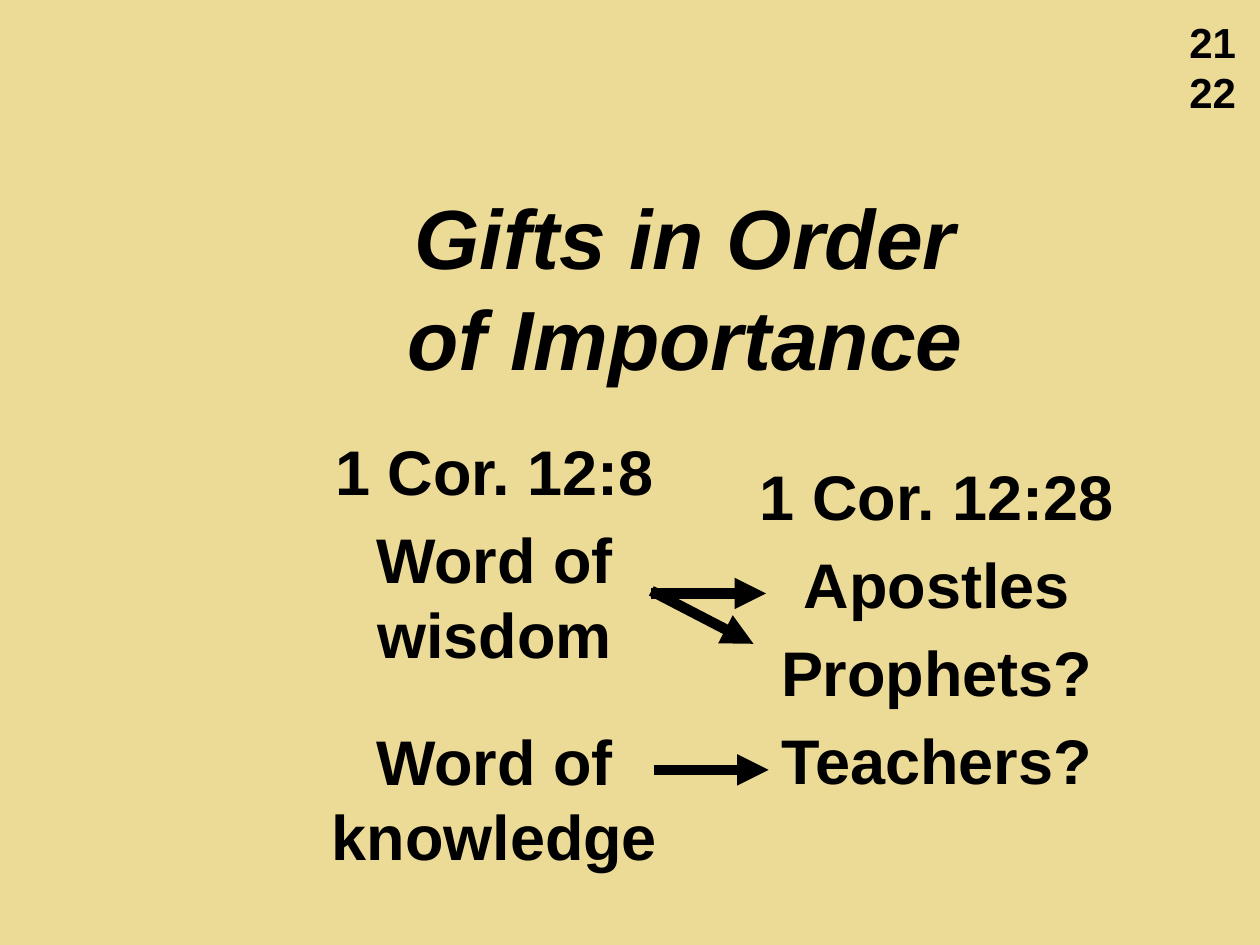
from lxml.etree import SubElement
from pptx import Presentation
from pptx.dml.color import RGBColor
from pptx.enum.shapes import MSO_CONNECTOR as Connector
from pptx.enum.text import MSO_ANCHOR as Anchor, MSO_AUTO_SIZE as AutoSize, PP_ALIGN as Align
from pptx.oxml.ns import qn
from pptx.util import Inches, Pt

WIDTH, HEIGHT = Inches(10), Inches(7.5)
TITLE_ONLY = 5
SAND, BLACK = "ECDB96", "000000"
FONT = "Arial"
BODY_SIZE, BODY_GAP, GROUP_GAP = 36, 7.2, 29


def color(value):
    """Turn a hex string into a colour."""
    return RGBColor.from_string(value)


def across(percent):
    """Convert a percentage of the slide width to a length."""
    return round(WIDTH * percent / 100)


def down(percent):
    """Convert a percentage of the slide height to a length."""
    return round(HEIGHT * percent / 100)


def box(left, top, width, height):
    """Convert a box in slide percentages to lengths."""
    return across(left), down(top), across(width), down(height)


def write(frame, lines, size, align, italic=False):
    """Fill a text frame with one bold paragraph per line."""
    frame.text = "\n".join(lines)
    for paragraph in frame.paragraphs:
        paragraph.alignment = align
        for run in paragraph.runs:
            font = run.font
            font.name, font.size = FONT, Pt(size)
            font.bold, font.italic = True, italic
            font.color.rgb = color(BLACK)


def add_title(slide, text, area):
    """Place and format the title placeholder."""
    title = slide.shapes.title
    title.left, title.top, title.width, title.height = box(*area)
    frame = title.text_frame
    write(frame, [text], 48, Align.CENTER, italic=True)
    frame.auto_size = AutoSize.NONE
    frame.vertical_anchor = Anchor.MIDDLE


def add_gift_list(slide, lines, area):
    """Add a centred list of gifts and return its paragraphs."""
    frame = slide.shapes.add_textbox(*box(*area)).text_frame
    frame.word_wrap = True
    write(frame, lines, BODY_SIZE, Align.CENTER)
    for paragraph in frame.paragraphs:
        paragraph.space_before = Pt(BODY_GAP)
    return frame.paragraphs


def add_page_numbers(slide, numbers, area):
    """Add the stacked page numbers in the corner."""
    frame = slide.shapes.add_textbox(*box(*area)).text_frame
    write(frame, numbers, 24, Align.LEFT)
    frame.word_wrap = False
    frame.auto_size = AutoSize.SHAPE_TO_FIT_TEXT


def add_arrow(slide, start, end):
    """Draw a thick arrow between two points in slide percentages."""
    arrow = slide.shapes.add_connector(
        Connector.STRAIGHT, across(start[0]), down(start[1]), across(end[0]), down(end[1])
    )
    arrow.line.color.rgb = color(BLACK)
    arrow.line.width = Pt(6)
    SubElement(arrow.line._get_or_add_ln(), qn("a:tailEnd"), type="triangle")
    SubElement(arrow._element.spPr, qn("a:effectLst"))


def main():
    """Build and save the slide."""
    deck = Presentation()
    deck.slide_width, deck.slide_height = WIDTH, HEIGHT
    slide = deck.slides.add_slide(deck.slide_layouts[TITLE_ONLY])
    background = slide.background.fill
    background.solid()
    background.fore_color.rgb = color(SAND)

    add_title(slide, "Gifts in Order of Importance", (28, 19.6, 52.8, 21.47))
    word_gifts = add_gift_list(
        slide,
        ["1 Cor. 12:8", "Word of wisdom", "Word of knowledge"],
        (19.9, 45.07, 38.7, 52.27),
    )
    word_gifts[-1].space_before = Pt(GROUP_GAP)
    add_gift_list(
        slide,
        ["1 Cor. 12:28", "Apostles", "Prophets?", "Teachers?"],
        (55, 47.73, 38.7, 42.13),
    )
    add_page_numbers(slide, ["21", "22"], (93.4, 1.07, 5.8, 12.13))

    wisdom_to_apostles = (51.7, 62.8), (60.8, 62.8)
    wisdom_to_prophets = (51.7, 62.53), (59.8, 68.13)
    knowledge_to_teachers = (51.9, 81.47), (61, 81.47)
    for start, end in (wisdom_to_apostles, wisdom_to_prophets, knowledge_to_teachers):
        add_arrow(slide, start, end)

    deck.save("out.pptx")


if __name__ == "__main__":
    main()
